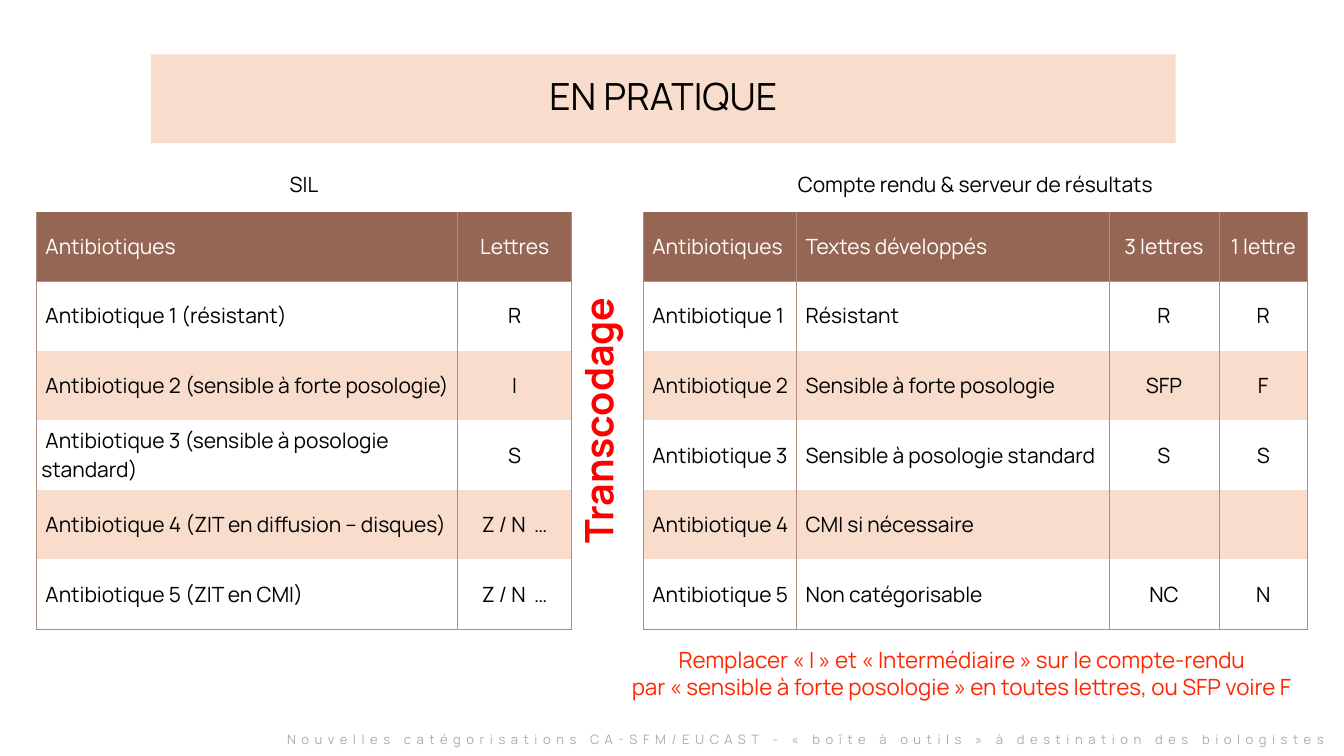
from lxml.etree import SubElement as Sub
from pptx import Presentation
from pptx.dml.color import RGBColor
from pptx.enum.text import MSO_ANCHOR as Anchor, PP_ALIGN as Align
from pptx.oxml.ns import qn
from pptx.util import Inches, Pt

# Content
TITLE = "EN PRATIQUE"
GROUPS = [(0, 1, "SIL"), (3, 6, "Compte rendu & serveur de résultats")]
LINK = "Transcodage"
HEADS = ["Antibiotiques", "Lettres", "", "Antibiotiques", "Textes développés",
         "3 lettres", "1 lettre"]
ROWS = [
    ["Antibiotique 1 (résistant)", "R", "", "Antibiotique 1",
     "Résistant", "R", "R"],
    ["Antibiotique 2 (sensible à forte posologie)", "I", "", "Antibiotique 2",
     "Sensible à forte posologie", "SFP", "F"],
    ["Antibiotique 3 (sensible à posologie standard)", "S", "", "Antibiotique 3",
     "Sensible à posologie standard", "S", "S"],
    ["Antibiotique 4 (ZIT en diffusion – disques)", "Z / N  …", "", "Antibiotique 4",
     "CMI si nécessaire", "", ""],
    ["Antibiotique 5 (ZIT en CMI)", "Z / N  …", "", "Antibiotique 5",
     "Non catégorisable", "NC", "N"],
]
NOTE = ["Remplacer « I » et « Intermédiaire » sur le compte-rendu",
        "par « sensible à forte posologie » en toutes lettres, ou SFP voire F"]
FOOT = ("Nouvelles catégorisations CA-SFM/EUCAST - "
        "« boîte à outils » à destination des biologistes")

FONT = "Manrope"
COLORS = {"black": "000000", "white": "FFFFFF", "peach": "F8DDCC",
          "brown": "956654", "line": "B18C7F", "red": "FF0000",
          "note": "FF2600", "gray": "AFABAB"}
WIDTHS = [4.18, 1.13, 0.71, 1.52, 3.1, 1.09, 0.88]
TOP_H, ROW_H = 0.53, 0.69
GAP = 2
LEFT = (0, 3, 4)
PLAIN = "{2D5ABB26-0587-4C30-8999-92F81FD0307C}"


def color(name):
    return RGBColor.from_string(COLORS[name])


def write(para, text, size, tint, align, bold=False):
    para.alignment = align
    run = para.add_run()
    run.text = text
    font = run.font
    font.name, font.size, font.bold = FONT, Pt(size), bold
    font.color.rgb = color(tint)
    return run


def add_box(x, y, w, h, anchor, wrap):
    frame = slide.shapes.add_textbox(*map(Inches, (x, y, w, h))).text_frame
    frame.word_wrap, frame.vertical_anchor = wrap, anchor
    return frame


def fill_cell(cell, text, size, tint, align, bold=False):
    cell.vertical_anchor = Anchor.MIDDLE
    cell.margin_left = cell.margin_right = Inches(0.05)
    cell.margin_top = cell.margin_bottom = 0
    if text:
        write(cell.text_frame.paragraphs[0], text, size, tint, align, bold)


def add_edges(cell, sides):
    props = cell._tc.get_or_add_tcPr()
    for side in sides:
        edge = Sub(props, qn("a:ln" + side), w=str(Pt(0.5)))
        Sub(Sub(edge, qn("a:solidFill")), qn("a:srgbClr"), val=COLORS["line"])


def paint(cell, tint, alpha=100):
    cell.fill.solid()
    cell.fill.fore_color.rgb = color(tint)
    if alpha < 100:
        mark = cell._tc.tcPr.find(".//" + qn("a:srgbClr"))
        Sub(mark, qn("a:alpha"), val=str(alpha * 1000))


deck = Presentation()
deck.slide_width, deck.slide_height = Inches(13.33), Inches(7.5)
slide = deck.slides.add_slide(deck.slide_layouts[5])

# Title
title = slide.shapes.title
title.left, title.top, title.width, title.height = map(
    Inches, (1.5, 0.54, 10.16, 0.88))
title.fill.solid()
title.fill.fore_color.rgb = color("peach")
title.text_frame.vertical_anchor = Anchor.MIDDLE
para = title.text_frame.paragraphs[0]
para.line_spacing = 0.9
write(para, TITLE, 26.7, "black", Align.CENTER)

# Table
count = len(ROWS) + 2
frame = slide.shapes.add_table(
    count, len(WIDTHS), Inches(0.36), Inches(1.57), Inches(sum(WIDTHS)),
    Inches(TOP_H + ROW_H * (count - 1)))
table = frame.table
table.first_row = table.horz_banding = False
table._tbl.tblPr.find(qn("a:tableStyleId")).text = PLAIN
for col, width in zip(table.columns, WIDTHS):
    col.width = Inches(width)
for i, row in enumerate(table.rows):
    row.height = Inches(ROW_H if i else TOP_H)

# Group labels and the upright link column
for first, last, label in GROUPS:
    cell = table.cell(0, first)
    cell.merge(table.cell(0, last))
    fill_cell(cell, label, 15, "black", Align.CENTER)
cell = table.cell(1, GAP)
cell.merge(table.cell(count - 1, GAP))
fill_cell(cell, LINK, 28, "red", Align.CENTER, True)
cell._tc.tcPr.set("vert", "vert270")
add_edges(cell, "LR")

# Header and body cells
for r, line in enumerate([HEADS] + ROWS, 1):
    for c, text in enumerate(line):
        if c == GAP:
            continue
        cell = table.cell(r, c)
        align = Align.LEFT if c in LEFT else Align.CENTER
        if c in LEFT:
            text = " " + text
        fill_cell(cell, text, 15, "white" if r == 1 else "black", align)
        add_edges(cell, "LRB" if r in (1, count - 1) else "LR")
        if r == 1:
            paint(cell, "brown")
        elif r % 2:
            paint(cell, "peach", 40)

# Note
body = add_box(6.1, 6.37, 6.88, 0.62, Anchor.MIDDLE, False)
body.margin_left = body.margin_right = Inches(0.04)
body.margin_top = body.margin_bottom = Inches(0.04)
for i, text in enumerate(NOTE):
    para = body.add_paragraph() if i else body.paragraphs[0]
    write(para, text, 16, "note", Align.CENTER)

# Footer
body = add_box(0.65, 7.2, 12.59, 0.26, Anchor.BOTTOM, True)
run = write(body.paragraphs[0], FOOT, 9.3, "gray", Align.RIGHT)
run._r.get_or_add_rPr().set("spc", "400")

deck.save("out.pptx")
